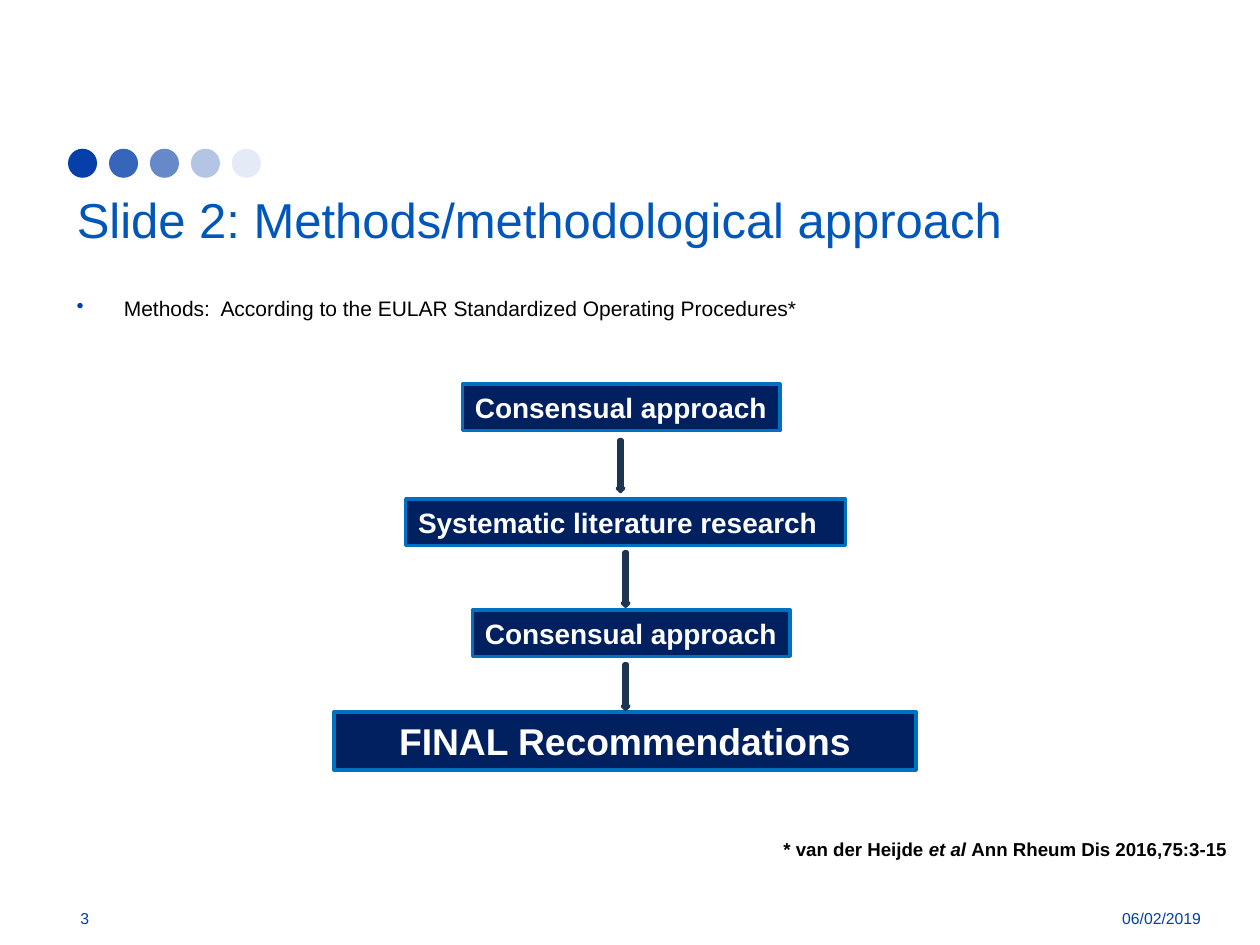
import pptx
import pptx.util
import pptx.dml.color
import pptx.enum.shapes
import pptx.enum.text
import pptx.oxml
import pptx.oxml.ns
import lxml.etree

Pt = pptx.util.Pt
ALIGN = pptx.enum.text.PP_ALIGN
ANCHOR = pptx.enum.text.MSO_ANCHOR
SHAPE = pptx.enum.shapes.MSO_SHAPE

COLORS = {
    "title": "0056B9", "accent": "003FA8", "dot": "063FA9", "text": "000000",
    "white": "FFFFFF", "box": "002060", "box_line": "0070C0",
    "arrow": "28476D", "arrow_line": "1E3551",
}

# Content
TITLE = "Slide 2: Methods/methodological approach"
METHODS = "Methods:  According to the EULAR Standardized Operating Procedures*"
PAGE_NUMBER = "3"
DATE = "06/02/2019"
CITATION = [("* van der Heijde ", False), ("et al ", True),
            ("Ann Rheum Dis 2016,75:3-15", False)]
DOT_OPACITIES = [100, 80, 61, 30, 10]

# Steps: text, centre x, top, width, height, text size, alignment
STEPS = [
    ("Consensual approach", 355, 219.6, 181.4, 26.6, 16, ALIGN.LEFT),
    ("Systematic literature research", 357.5, 285.1, 251.3, 26.6, 16, ALIGN.LEFT),
    ("Consensual approach", 360.7, 348.5, 181.4, 26.6, 16, ALIGN.LEFT),
    ("FINAL Recommendations", 357.1, 406.8, 332.6, 33.1, 21.3, ALIGN.CENTER),
]
# Arrows: centre x, top, height
ARROWS = [(354.6, 251.3, 29.5), (357.5, 315.4, 31), (357.5, 379.4, 25.9)]
ARROW_WIDTH = 3.6
DOT_LEFT, DOT_TOP, DOT_SIZE, DOT_STEP = 38.9, 85, 16.6, 23.4


def rgb(name):
    return pptx.dml.color.RGBColor.from_string(COLORS[name])


def add_span(para, text, size, color, bold=False, italic=False):
    span = para.add_run()
    span.text = text
    font = span.font
    font.name, font.size, font.bold, font.italic = "Arial", Pt(size), bold, italic
    font.color.rgb = rgb(color)


def add_text(page, left, top, width, height, anchor=ANCHOR.TOP, wrap=True):
    frame = page.shapes.add_textbox(Pt(left), Pt(top), Pt(width), Pt(height)).text_frame
    frame.word_wrap = wrap
    frame.vertical_anchor = anchor
    return frame.paragraphs[0]


def add_figure(page, kind, left, top, width, height, fill, line=None):
    figure = page.shapes.add_shape(kind, Pt(left), Pt(top), Pt(width), Pt(height))
    figure.shadow.inherit = False
    figure.fill.solid()
    figure.fill.fore_color.rgb = rgb(fill)
    if line:
        figure.line.color.rgb = rgb(line)
        figure.line.width = Pt(2)
        lxml.etree.SubElement(figure.line._get_or_add_ln(), pptx.oxml.ns.qn("a:round"))
    else:
        figure.line.fill.background()
    return figure


def set_opacity(figure, percent):
    color = figure.fill._xPr.find(".//" + pptx.oxml.ns.qn("a:srgbClr"))
    alpha = lxml.etree.SubElement(color, pptx.oxml.ns.qn("a:alpha"))
    alpha.set("val", str(percent * 1000))


def add_bullet(para, indent, color):
    props = para._p.get_or_add_pPr()
    props.set("marL", str(Pt(indent)))
    props.set("indent", str(-Pt(indent)))
    bullet_color = lxml.etree.SubElement(props, pptx.oxml.ns.qn("a:buClr"))
    lxml.etree.SubElement(bullet_color, pptx.oxml.ns.qn("a:srgbClr")).set("val", COLORS[color])
    lxml.etree.SubElement(props, pptx.oxml.ns.qn("a:buChar")).set("char", "•")


def main():
    deck = pptx.Presentation()
    deck.slide_width, deck.slide_height = Pt(720), Pt(540)
    page = deck.slides.add_slide(deck.slide_layouts[5])

    # Fading dots
    for index, opacity in enumerate(DOT_OPACITIES):
        dot = add_figure(page, SHAPE.OVAL, DOT_LEFT + index * DOT_STEP, DOT_TOP,
                         DOT_SIZE, DOT_SIZE, "dot")
        if opacity < 100:
            set_opacity(dot, opacity)

    # Title
    title = page.shapes.title
    title.left, title.top, title.width, title.height = Pt(36.7), Pt(102.2), Pt(656), Pt(49.7)
    title.text_frame.vertical_anchor = ANCHOR.MIDDLE
    para = title.text_frame.paragraphs[0]
    para.alignment = ALIGN.LEFT
    para.line_spacing = 0.9
    add_span(para, TITLE, 28, "title")

    # Page number and date
    para = add_text(page, 38.9, 510.5, 69, 28.8, ANCHOR.MIDDLE)
    add_span(para, PAGE_NUMBER, 9, "accent")
    para = add_text(page, 596.9, 510.5, 96.5, 28.8, ANCHOR.MIDDLE)
    para.alignment = ALIGN.RIGHT
    add_span(para, DATE, 9, "accent")

    # Methods bullet
    para = add_text(page, 36.7, 165.5, 656, 40)
    add_bullet(para, 27, "accent")
    add_span(para, METHODS, 12, "text")

    # Flow of steps
    for text, center, top, width, height, size, alignment in STEPS:
        box = add_figure(page, SHAPE.RECTANGLE, center - width / 2, top, width, height,
                         "box", "box_line")
        frame = box.text_frame
        frame.word_wrap = True
        frame.vertical_anchor = ANCHOR.MIDDLE
        if alignment == ALIGN.LEFT:
            frame.margin_right = Pt(3.6)
        para = frame.paragraphs[0]
        para.alignment = alignment
        add_span(para, text, size, "white", bold=True)
    for center, top, height in ARROWS:
        add_figure(page, SHAPE.DOWN_ARROW, center - ARROW_WIDTH / 2, top,
                   ARROW_WIDTH, height, "arrow", "arrow_line")

    # Citation
    para = add_text(page, 440.6, 475.2, 270.7, 20.2, wrap=False)
    for text, italic in CITATION:
        add_span(para, text, 10.7, "text", bold=True, italic=italic)

    deck.save("out.pptx")


if __name__ == "__main__":
    main()
